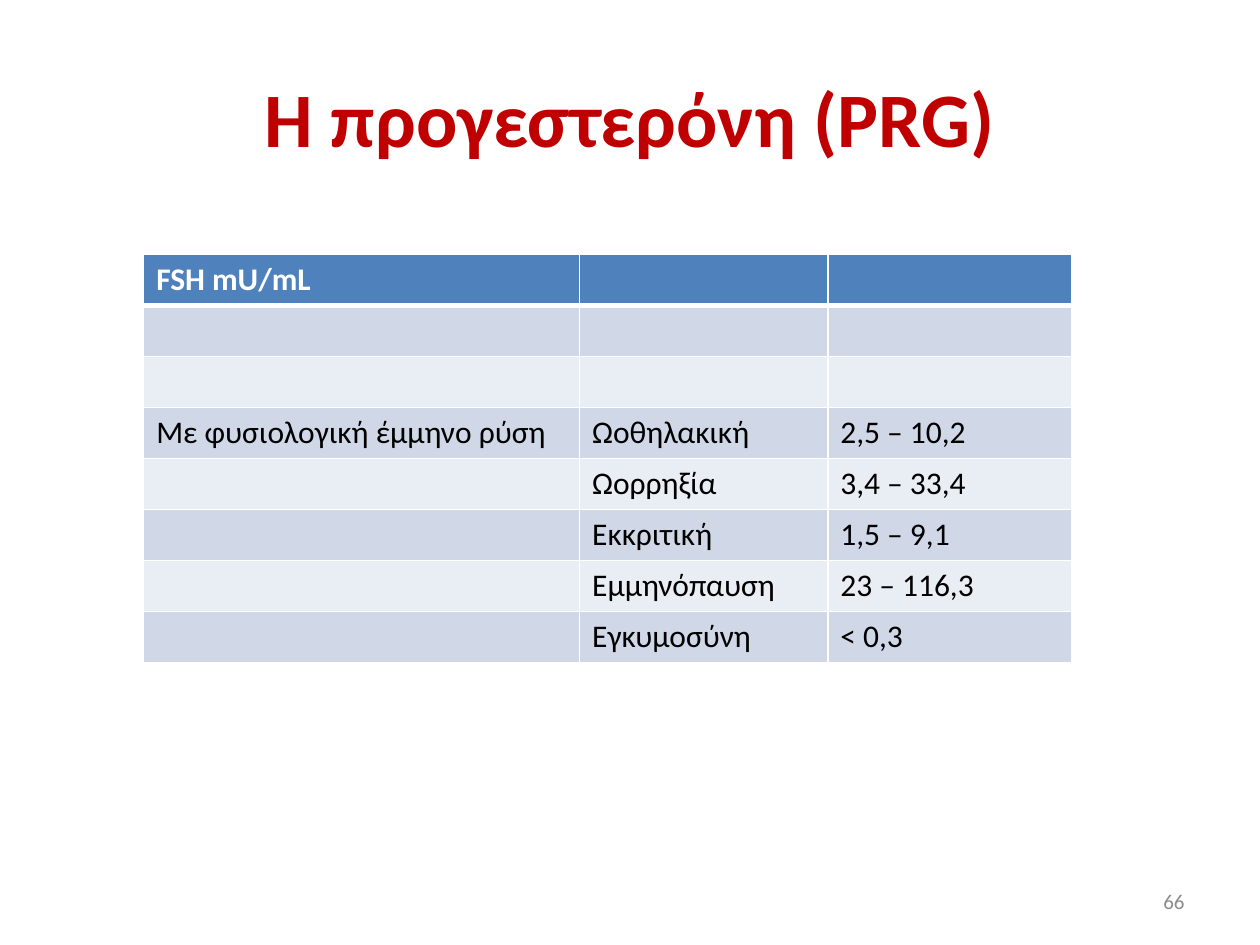
from dataclasses import dataclass

from lxml import etree
from pptx import Presentation
from pptx.dml.color import RGBColor
from pptx.enum.text import MSO_ANCHOR, PP_ALIGN
from pptx.oxml.ns import qn
from pptx.util import Inches, Pt

MIDDLE = MSO_ANCHOR.MIDDLE
LEFT, CENTER, RIGHT = PP_ALIGN.LEFT, PP_ALIGN.CENTER, PP_ALIGN.RIGHT
FONT = "Calibri"
COLORS = {
    "title": "C00000",
    "number": "8C8C8C",
    "header": "4F81BD",
    "odd_row": "D0D8E8",
    "even_row": "E9EDF4",
    "white": "FFFFFF",
    "black": "000000",
}


@dataclass(frozen=True)
class TextStyle:
    size: int
    color: str
    bold: bool = False
    align: PP_ALIGN = LEFT


@dataclass(frozen=True)
class Label:
    text: str
    left: float
    top: float
    width: float
    height: float
    style: TextStyle


LABELS = [
    Label("H προγεστερόνη (PRG)", 0.5, 0.3, 9, 1.25, TextStyle(44, "title", True, CENTER)),
    Label("66", 7.17, 6.95, 2.33, 0.4, TextStyle(12, "number", align=RIGHT)),
]

HEADER_STYLE = TextStyle(18, "white", True)
BODY_STYLE = TextStyle(18, "black")
COLUMN_WIDTHS = [3.46, 1.97, 1.94]
ROW_HEIGHT = 0.405
ROWS = [
    ("FSH mU/mL", "", ""),
    ("", "", ""),
    ("", "", ""),
    ("Με φυσιολογική έμμηνο ρύση", "Ωοθηλακική", "2,5 – 10,2"),
    ("", "Ωορρηξία", "3,4 – 33,4"),
    ("", "Εκκριτική", "1,5 – 9,1"),
    ("", "Εμμηνόπαυση", "23 – 116,3"),
    ("", "Εγκυμοσύνη", "< 0,3"),
]


def rgb(name: str) -> RGBColor:
    return RGBColor.from_string(COLORS[name])


def write_text(text_frame, text: str, style: TextStyle) -> None:
    paragraph = text_frame.paragraphs[0]
    paragraph.alignment = style.align
    run = paragraph.add_run()
    run.text = text
    run.font.name = FONT
    run.font.size = Pt(style.size)
    run.font.bold = style.bold
    run.font.color.rgb = rgb(style.color)


def add_label(slide, label: Label) -> None:
    box = slide.shapes.add_textbox(
        Inches(label.left), Inches(label.top), Inches(label.width), Inches(label.height)
    )
    box.text_frame.word_wrap = True
    box.text_frame.vertical_anchor = MIDDLE
    write_text(box.text_frame, label.text, label.style)


def set_borders(cell, top: int, bottom: int) -> None:
    """Draw white cell borders; widths are in points."""
    properties = cell._tc.get_or_add_tcPr()
    widths = {"a:lnL": 1, "a:lnR": 1, "a:lnT": top, "a:lnB": bottom}
    for position, (tag, width) in enumerate(widths.items()):
        line = etree.Element(qn(tag), w=str(Pt(width)))
        fill = etree.SubElement(line, qn("a:solidFill"))
        etree.SubElement(fill, qn("a:srgbClr"), val=COLORS["white"])
        properties.insert(position, line)


def add_hormone_table(slide, left: float, top: float) -> None:
    table = slide.shapes.add_table(
        len(ROWS), len(COLUMN_WIDTHS), Inches(left), Inches(top),
        Inches(sum(COLUMN_WIDTHS)), Inches(ROW_HEIGHT * len(ROWS)),
    ).table
    for column, width in zip(table.columns, COLUMN_WIDTHS):
        column.width = Inches(width)
    for row_index, texts in enumerate(ROWS):
        is_header = row_index == 0
        band = "header" if is_header else ("odd_row" if row_index % 2 else "even_row")
        table.rows[row_index].height = Inches(ROW_HEIGHT)
        for column_index, text in enumerate(texts):
            cell = table.cell(row_index, column_index)
            cell.fill.solid()
            cell.fill.fore_color.rgb = rgb(band)
            set_borders(cell, top=3 if row_index == 1 else 1, bottom=3 if is_header else 1)
            if text:
                write_text(cell.text_frame, text, HEADER_STYLE if is_header else BODY_STYLE)


def main() -> None:
    presentation = Presentation()
    presentation.slide_width = Inches(10)
    presentation.slide_height = Inches(7.5)
    slide = presentation.slides.add_slide(presentation.slide_layouts[6])

    # Title and slide number
    for label in LABELS:
        add_label(slide, label)

    # Reference values
    add_hormone_table(slide, 1.14, 2.02)

    presentation.save("out.pptx")


if __name__ == "__main__":
    main()
